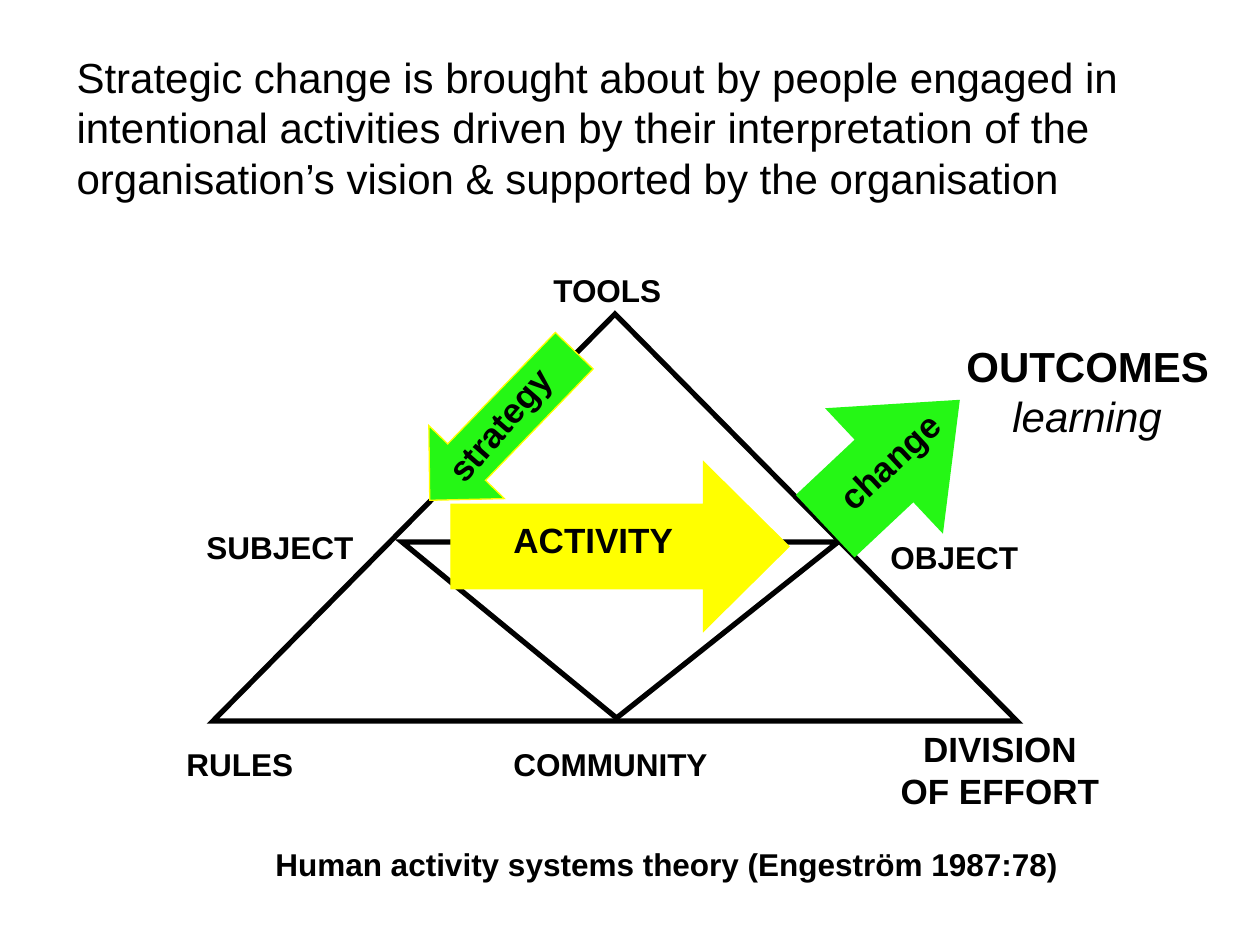
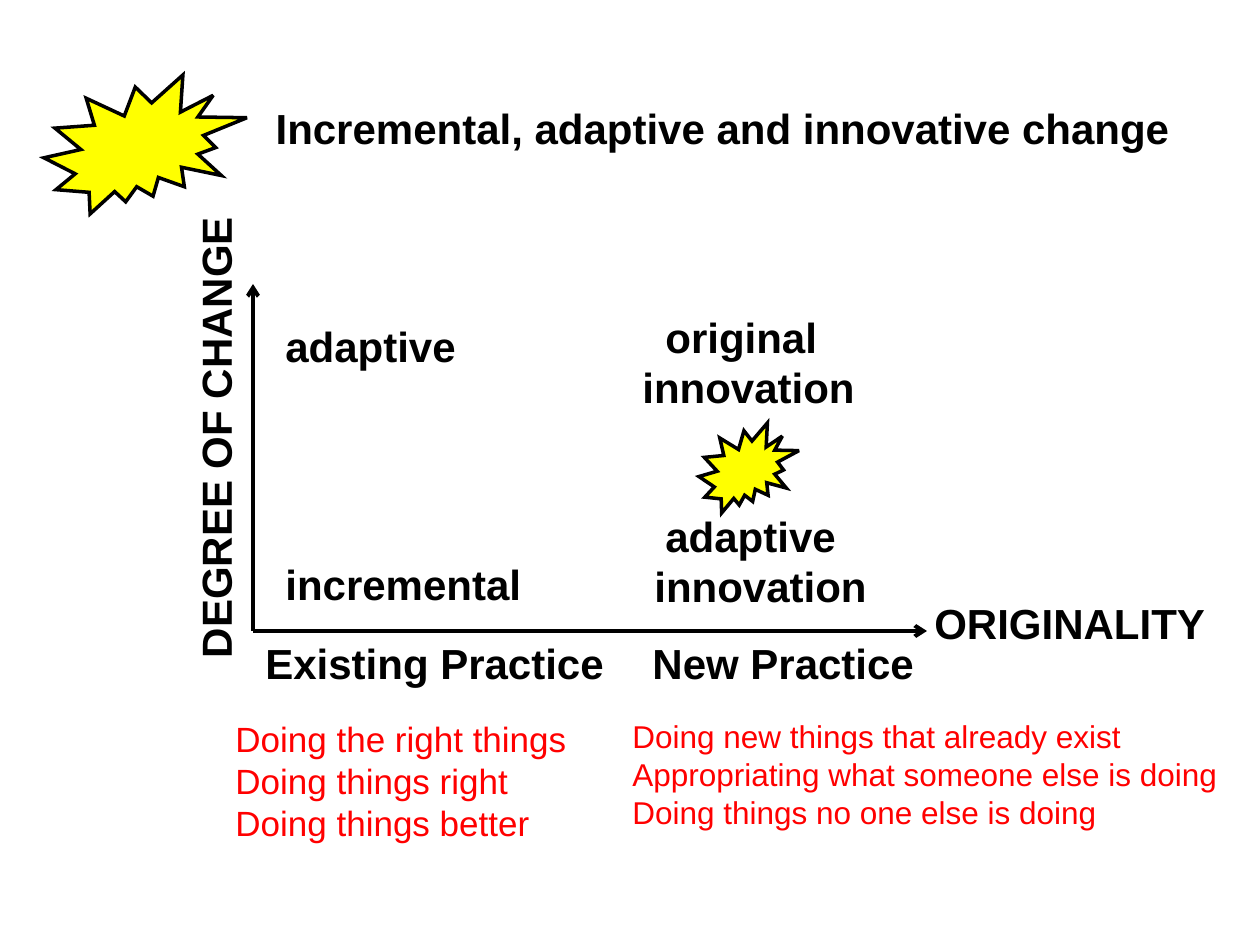
"""Builds two slides on strategic change: an activity triangle and a map of change types."""
import pptx
import pptx.dml.color
import pptx.enum.shapes
import pptx.enum.text
import pptx.oxml.ns
import pptx.util
from lxml import etree

BLACK = pptx.dml.color.RGBColor(0x00, 0x00, 0x00)
RED = pptx.dml.color.RGBColor(0xFF, 0x00, 0x00)
YELLOW = pptx.dml.color.RGBColor(0xFF, 0xFF, 0x00)
GREEN = pptx.dml.color.RGBColor(0x25, 0xF7, 0x15)

SHAPE = pptx.enum.shapes.MSO_SHAPE
ANCHOR = pptx.enum.text.MSO_ANCHOR
ALIGN = pptx.enum.text.PP_ALIGN
qn = pptx.oxml.ns.qn


def px(count):
    return pptx.util.Emu(round(count * 914400 / 126))


class SlideBuilder:
    """Holds the shared style and adds elements to the current slide."""

    font = "Arial"

    def __init__(self, deck):
        self.deck = deck
        self.slide = None

    def new_slide(self, title, place, bold=False, anchor=ANCHOR.TOP):
        self.slide = self.deck.slides.add_slide(self.deck.slide_layouts[5])
        box = self.slide.shapes.title
        box.left, box.top, box.width, box.height = map(px, place)
        self.fill_text(box, [title], 24, bold=bold, anchor=anchor)

    def fill_text(self, box, lines, size, color=BLACK, bold=True, italic_lines=(),
                  indents=(), align=ALIGN.LEFT, anchor=ANCHOR.TOP):
        frame = box.text_frame
        frame.word_wrap = True
        frame.auto_size = pptx.enum.text.MSO_AUTO_SIZE.NONE
        frame.vertical_anchor = anchor
        frame.text = "\n".join(lines)
        for para, indent in zip(frame.paragraphs, indents):
            para._p.get_or_add_pPr().set("marL", str(px(indent)))
        for index, para in enumerate(frame.paragraphs):
            para.alignment = align
            for span in para.runs:
                span.font.name = self.font
                span.font.size = pptx.util.Pt(size)
                span.font.color.rgb = color
                span.font.italic = index in italic_lines
                span.font.bold = bold and index not in italic_lines

    def text(self, place, *lines, size=24, rotation=0, **style):
        box = self.slide.shapes.add_textbox(*map(px, place))
        box.rotation = rotation
        self.fill_text(box, lines, size, **style)

    def shape(self, kind, place, fill=None, line=BLACK, width=3, rotation=0, adjust=()):
        shape = self.slide.shapes.add_shape(kind, *map(px, place))
        shape.shadow.inherit = False
        shape.rotation = rotation
        for index, value in enumerate(adjust):
            shape.adjustments[index] = value
        if fill is None:
            shape.fill.background()
        else:
            shape.fill.solid()
            shape.fill.fore_color.rgb = fill
        shape.line.color.rgb = line
        shape.line.width = pptx.util.Pt(width)
        etree.SubElement(shape.line._get_or_add_ln(), qn("a:miter"), lim="800000")

    def arrow(self, start, end):
        line = self.slide.shapes.add_connector(
            pptx.enum.shapes.MSO_CONNECTOR.STRAIGHT, *map(px, start + end))
        line.line.color.rgb = BLACK
        line.line.width = pptx.util.Pt(2.25)
        etree.SubElement(line.line._get_or_add_ln(), qn("a:tailEnd"), type="arrow")
        etree.SubElement(line._element.spPr, qn("a:effectLst"))


def add_activity_triangle(page):
    page.new_slide("Strategic change is brought about by people engaged in intentional "
                   "activities driven by their interpretation of the organisation’s "
                   "vision & supported by the organisation", (64, 45, 1071, 165))
    page.shape(SHAPE.ISOSCELES_TRIANGLE, (213, 314, 804, 407))
    page.shape(SHAPE.ISOSCELES_TRIANGLE, (402, 542, 436, 176), rotation=180, adjust=[0.508])
    for label, left, top, width in [
            ("TOOLS", 541, 265, 149), ("OBJECT", 878, 532, 169),
            ("SUBJECT", 194, 522, 179), ("RULES", 174, 739, 165),
            ("COMMUNITY", 501, 739, 248),
            ("Human activity systems theory (Engeström 1987:78)", 263, 839, 893)]:
        page.text((left, top, width, 50), label, size=18)
    page.text((848, 721, 304, 97), "DIVISION", "OF EFFORT", size=20, align=ALIGN.CENTER)
    page.text((942, 334, 318, 115), "OUTCOMES", "learning", italic_lines=[1], indents=[12, 58])

    page.shape(SHAPE.RIGHT_ARROW, (803, 383, 178, 161), GREEN, GREEN,
               rotation=316.8, adjust=[0.5, 0.604])
    for place, fill, rotation in [((451, 462, 338, 169), YELLOW, 0),
                                  ((398, 373, 208, 105), GREEN, 134)]:
        page.shape(SHAPE.RIGHT_ARROW, place, fill, YELLOW, 0.75, rotation, [0.5, 0.505])
    page.text((501, 512, 208, 55), "ACTIVITY", size=20)
    page.text((417, 394, 169, 55), "strategy", size=20, rotation=311)
    page.text((805, 433, 169, 55), "change", size=20, rotation=316.9, indents=[10])


def add_change_map(page):
    page.new_slide("Incremental, adaptive and innovative change", (263, 96, 927, 63),
                   bold=True, anchor=ANCHOR.MIDDLE)
    for place in [(44, 75, 203, 139), (699, 423, 100, 90)]:
        page.shape(SHAPE.EXPLOSION2, place, YELLOW, width=2)

    origin = (253, 631)
    page.arrow(origin, (927, 631))
    page.arrow(origin, (253, 284))
    page.text((-33, 391, 496, 63), "DEGREE OF CHANGE", rotation=270, anchor=ANCHOR.MIDDLE)
    for label, left, top, width in [
            ("ORIGINALITY", 922, 591, 338), ("incremental", 273, 552, 307),
            ("adaptive", 273, 314, 307), ("Existing Practice", 253, 631, 387),
            ("New Practice", 640, 631, 387)]:
        page.text((left, top, width, 63), label, anchor=ANCHOR.MIDDLE)
    for label, top, indents in [("adaptive", 503, (23, 12)), ("original", 304, (23, 0))]:
        page.text((630, top, 307, 115), label, "innovation",
                  indents=indents, anchor=ANCHOR.MIDDLE)

    page.text((223, 711, 380, 140), "Doing the right things", "Doing things right",
              "Doing things better", size=20, color=RED, bold=False)
    page.text((620, 711, 620, 204), "Doing new things that already exist",
              "Appropriating what someone else is doing",
              "Doing things no one else is doing", size=18, color=RED, bold=False)


def main():
    deck = pptx.Presentation()
    deck.slide_width, deck.slide_height = px(1260), px(945)
    page = SlideBuilder(deck)
    add_activity_triangle(page)
    add_change_map(page)
    deck.save("out.pptx")


if __name__ == "__main__":
    main()
